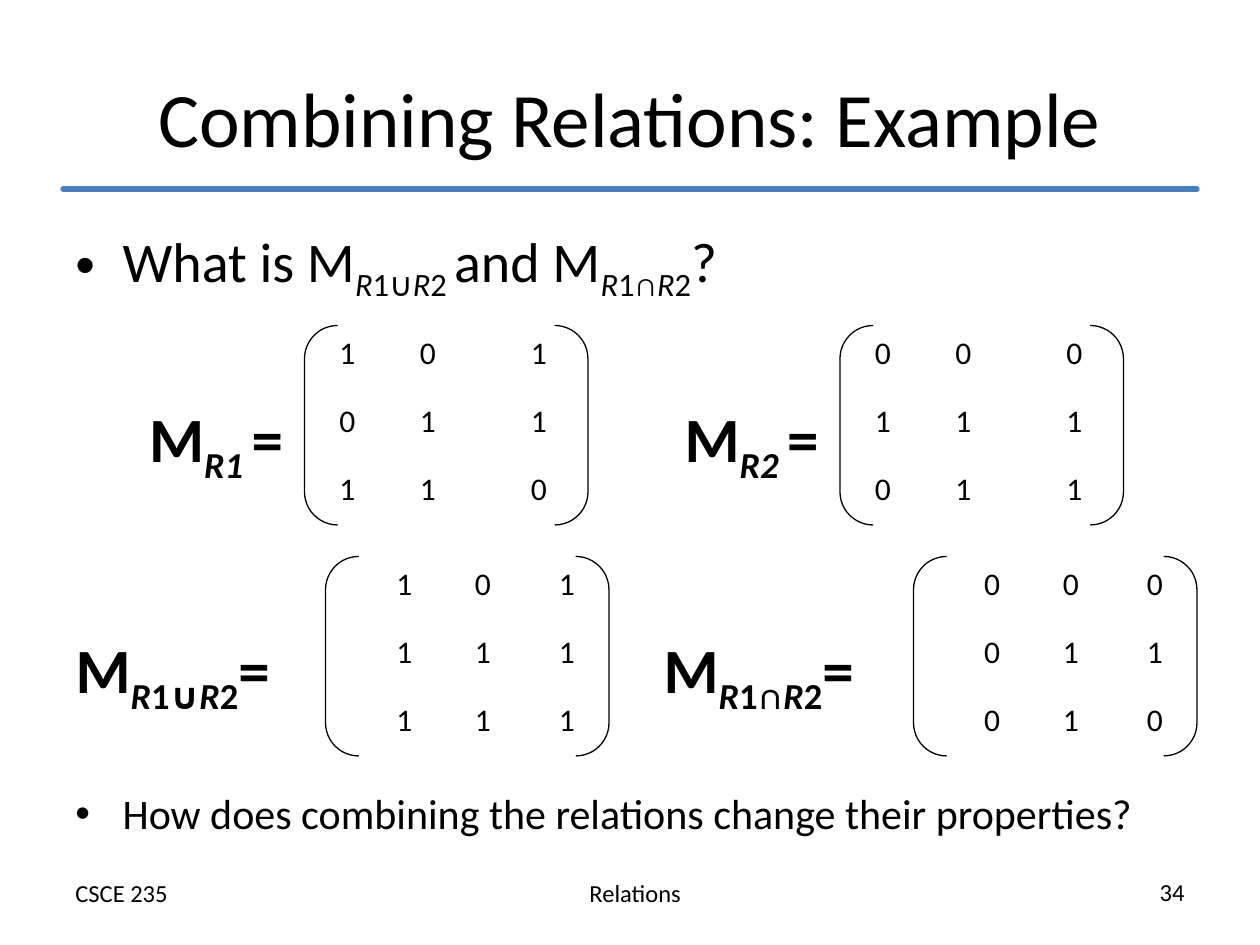
import pptx
import pptx.dml.color
import pptx.enum.shapes
import pptx.enum.text
import pptx.oxml
import pptx.oxml.ns
import pptx.util
from dataclasses import dataclass
from typing import Any, NamedTuple

Pt = pptx.util.Pt
ALIGN = pptx.enum.text.PP_ALIGN
ANCHOR = pptx.enum.text.MSO_ANCHOR
SHAPE = pptx.enum.shapes.MSO_SHAPE
NS = pptx.oxml.ns.nsdecls("a")
HEX = {"ink": "000000", "rule": "4B7EBC", "grid": "FFFFFF"}
ROWS = (39, 39, 29)


class Bit(NamedTuple):
    text: str
    sub: bool = False
    italic: bool = False


@dataclass
class Matrix:
    left: float
    top: float
    cols: tuple[float, ...]
    label: list[Bit]
    rows: tuple[str, ...]
    bracket: float


@dataclass
class Label:
    box: tuple[float, float, float, float]
    text: str
    size: float
    align: Any
    anchor: Any = ANCHOR.TOP


def tint(name: str) -> Any:
    return pptx.dml.color.RGBColor.from_string(HEX[name])


def pair(sign: str, tail: str = "") -> list[Bit]:
    """Subscript of two relations joined by a set operator."""
    return [Bit("R", True, True), Bit("1" + sign, True),
            Bit("R", True, True), Bit("2" + tail, True)]


def write(para: Any, bits: list[Bit], size: float, bold: bool = False) -> None:
    for bit in bits:
        run = para.add_run()
        run.text = bit.text
        form = {"name": "Calibri", "size": Pt(size), "bold": bold,
                "italic": bit.italic}
        for key, value in form.items():
            setattr(run.font, key, value)
        run.font.color.rgb = tint("ink")
        if bit.sub:
            run.font._element.set("baseline", "-25000")


def add_box(slide: Any, box: tuple[float, ...], anchor: Any = ANCHOR.TOP) -> Any:
    frame = slide.shapes.add_textbox(*map(Pt, box)).text_frame
    for key, value in {"word_wrap": True, "vertical_anchor": anchor}.items():
        setattr(frame, key, value)
    return frame


def add_label(slide: Any, label: Label) -> None:
    para = add_box(slide, label.box, label.anchor).paragraphs[0]
    para.alignment = label.align
    write(para, [Bit(label.text)], label.size)


def add_rule(slide: Any) -> None:
    rule = slide.shapes.add_connector(
        pptx.enum.shapes.MSO_CONNECTOR.STRAIGHT, Pt(36), Pt(108), Pt(684), Pt(108))
    rule.line.color.rgb = tint("rule")
    rule.line.width = Pt(3)
    rule.line._get_or_add_ln().set("cap", "rnd")
    rule._element.spPr.append(pptx.oxml.parse_xml(f"<a:effectLst {NS}/>"))


def add_point(para: Any, bits: list[Bit], size: float) -> None:
    props = para._p.get_or_add_pPr()
    for key, value in {"marL": Pt(27), "indent": Pt(-27)}.items():
        props.set(key, str(value))
    for tag in ('buFont typeface="Arial"', 'buChar char="•"'):
        props.append(pptx.oxml.parse_xml(f"<a:{tag} {NS}/>".replace(
            f" {NS}/>", f" {NS} />")))
    write(para, bits, size)


def edge(cell: Any, row: int, col: int) -> None:
    """White borders, heavier under the first row and beside the label."""
    wide = {"L": 3 if row and col == 1 else 1, "R": 1,
            "T": 3 if row == 1 else 1, "B": 1 if row else 3}
    props = cell._tc.get_or_add_tcPr()
    for side, width in wide.items():
        props.append(pptx.oxml.parse_xml(
            f'<a:ln{side} {NS} w="{Pt(width)}"><a:solidFill>'
            f'<a:srgbClr val="{HEX["grid"]}"/></a:solidFill></a:ln{side}>'))


def add_matrix(slide: Any, matrix: Matrix) -> None:
    table = slide.shapes.add_table(
        len(ROWS), len(matrix.cols), Pt(matrix.left), Pt(matrix.top),
        Pt(sum(matrix.cols)), Pt(sum(ROWS))).table
    table.first_row = table.horz_banding = False
    for col, width in zip(table.columns, matrix.cols):
        col.width = Pt(width)
    for row, height in zip(table.rows, ROWS):
        row.height = Pt(height)
    for r, digits in enumerate(matrix.rows):
        for c in range(len(matrix.cols)):
            cell = table.cell(r, c)
            edge(cell, r, c)
            cell.fill.background()
            if c:
                para = cell.text_frame.paragraphs[0]
                para.alignment = ALIGN.CENTER
                write(para, [Bit(digits[c - 1])], 18)
    head = table.cell(0, 0)
    head.merge(table.cell(len(ROWS) - 1, 0))
    head.vertical_anchor = ANCHOR.MIDDLE
    write(head.text_frame.paragraphs[0], matrix.label, 36, True)

    mark = slide.shapes.add_shape(
        SHAPE.DOUBLE_BRACKET, Pt(matrix.bracket), Pt(matrix.top - 1.5),
        Pt(162), Pt(114))
    mark.shadow.inherit = False
    mark.fill.background()
    mark.line.color.rgb = tint("ink")
    mark.line.width = Pt(0.75)


def main() -> None:
    deck = pptx.Presentation()
    deck.slide_width, deck.slide_height = Pt(720), Pt(540)
    slide = deck.slides.add_slide(deck.slide_layouts[6])

    labels = [
        Label((258, 498, 210, 24.5), "Relations", 14, ALIGN.CENTER),
        Label((36, 498, 210, 24.5), "CSCE 235", 14, ALIGN.LEFT),
        Label((474, 497.5, 210, 24.5), "34", 14, ALIGN.RIGHT),
        Label((36, 21.6, 648, 90), "Combining Relations: Example", 44,
              ALIGN.CENTER, ANCHOR.MIDDLE),
    ]
    for label in labels:
        add_label(slide, label)
    add_rule(slide)

    body = add_box(slide, (36, 126, 648, 356.4))
    add_point(body.paragraphs[0],
              [Bit("What is M"), *pair("∪", " "), Bit("and M"),
               *pair("∩"), Bit("?")], 32)
    last = body.add_paragraph()
    last.space_before = Pt(277)
    add_point(last, [Bit(
        "How does combining the relations change their properties?")], 24)

    small, large = (98, 45, 47, 80), (174, 42, 48, 48)
    start, stop = Bit("M"), Bit("=")
    matrices = [
        Matrix(78, 187.5, small, [start, Bit("R1 ", True, True), stop],
               ("101", "011", "110"), 174),
        Matrix(384, 187.5, small, [start, Bit("R2 ", True, True), stop],
               ("000", "111", "011"), 480),
        Matrix(36, 319.5, large, [start, *pair("∪"), stop],
               ("101", "111", "111"), 186),
        Matrix(372, 319.5, large, [start, *pair("∩"), stop],
               ("000", "011", "010"), 522),
    ]
    for matrix in matrices:
        add_matrix(slide, matrix)
    deck.save("out.pptx")


if __name__ == "__main__":
    main()
